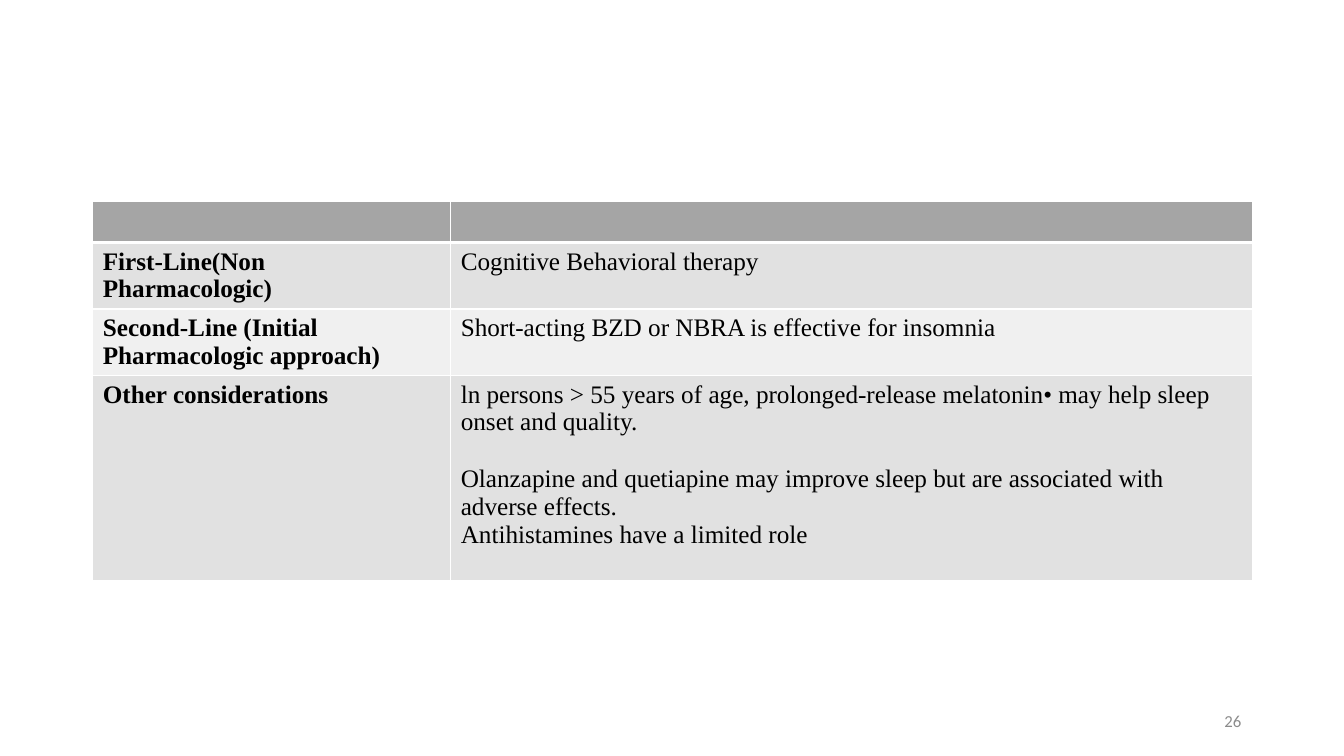
"""Builds a slide with a table of insomnia treatment lines."""
from lxml import etree
from pptx import Presentation
from pptx import util as u
from pptx.dml import color
from pptx.enum import text
from pptx.oxml import ns

COLOURS = {"header": "A5A5A5", "odd": "E1E1E1", "even": "F0F0F0",
           "rule": "FFFFFF", "body": "000000", "number": "8C8C8C"}
WIDTH, HEIGHT = u.Inches(13.33), u.Inches(7.5)
MARGIN = u.Inches(0.92)
COLUMNS = (3.55, 7.95)
ROWS = (0.4, 0.66, 0.66, 2.03)
PARAGRAPH_GAP = 20.5

TREATMENTS = [
    ("First-Line(Non Pharmacologic)",
     [("Cognitive Behavioral therapy", 0)]),
    ("Second-Line (Initial Pharmacologic approach)",
     [("Short-acting BZD or NBRA is effective for insomnia", 0)]),
    ("Other considerations",
     [("ln persons > 55 years of age, prolonged-release melatonin• "
       "may help sleep onset and quality.", 0),
      ("Olanzapine and quetiapine may improve sleep but are "
       "associated with adverse effects.", PARAGRAPH_GAP),
      ("Antihistamines have a limited role", 0)]),
]


def rgb(name):
    return color.RGBColor.from_string(COLOURS[name])


def add_span(para, words, font, size, colour, bold=False):
    span = para.add_run()
    span.text = words
    span.font.name = font
    span.font.size = u.Pt(size)
    span.font.bold = bold
    span.font.color.rgb = rgb(colour)


def write_cell(cell, paragraphs, bold):
    frame = cell.text_frame
    for index, (words, gap) in enumerate(paragraphs):
        para = frame.add_paragraph() if index else frame.paragraphs[0]
        para.space_before = u.Pt(gap)
        add_span(para, words, "Times New Roman", 18, "body", bold)


def style_cell(cell, fill, top, bottom):
    properties = cell._tc.get_or_add_tcPr()
    for side, points in (("L", 1), ("R", 1), ("T", top), ("B", bottom)):
        line = etree.SubElement(properties, ns.qn(f"a:ln{side}"), w=str(u.Pt(points)))
        solid = etree.SubElement(line, ns.qn("a:solidFill"))
        etree.SubElement(solid, ns.qn("a:srgbClr"), val=COLOURS["rule"])
    cell.fill.solid()
    cell.fill.fore_color.rgb = rgb(fill)


def add_treatment_table(page):
    frame = page.shapes.add_table(len(ROWS), len(COLUMNS), MARGIN, u.Inches(2),
                                  u.Inches(sum(COLUMNS)), u.Inches(sum(ROWS)))
    table = frame.table
    for column, width in zip(table.columns, COLUMNS):
        column.width = u.Inches(width)
    for index, (row, height) in enumerate(zip(table.rows, ROWS)):
        row.height = u.Inches(height)
        fill = "header" if index == 0 else "odd" if index % 2 else "even"
        for cell in row.cells:
            style_cell(cell, fill, 3 if index == 1 else 1, 3 if index == 0 else 1)
    for index, (label, advice) in enumerate(TREATMENTS, start=1):
        write_cell(table.cell(index, 0), [(label, 0)], True)
        write_cell(table.cell(index, 1), advice, False)


def add_page_number(page, number):
    width = u.Inches(3)
    box = page.shapes.add_textbox(WIDTH - MARGIN - width, u.Inches(6.95),
                                  width, u.Inches(0.4))
    frame = box.text_frame
    frame.word_wrap = True
    frame.vertical_anchor = text.MSO_ANCHOR.MIDDLE
    para = frame.paragraphs[0]
    para.alignment = text.PP_ALIGN.RIGHT
    add_span(para, number, "Calibri", 12, "number")


def main():
    deck = Presentation()
    deck.slide_width, deck.slide_height = WIDTH, HEIGHT
    page = deck.slides.add_slide(deck.slide_layouts[6])
    add_treatment_table(page)
    add_page_number(page, "26")
    deck.save("out.pptx")


if __name__ == "__main__":
    main()
